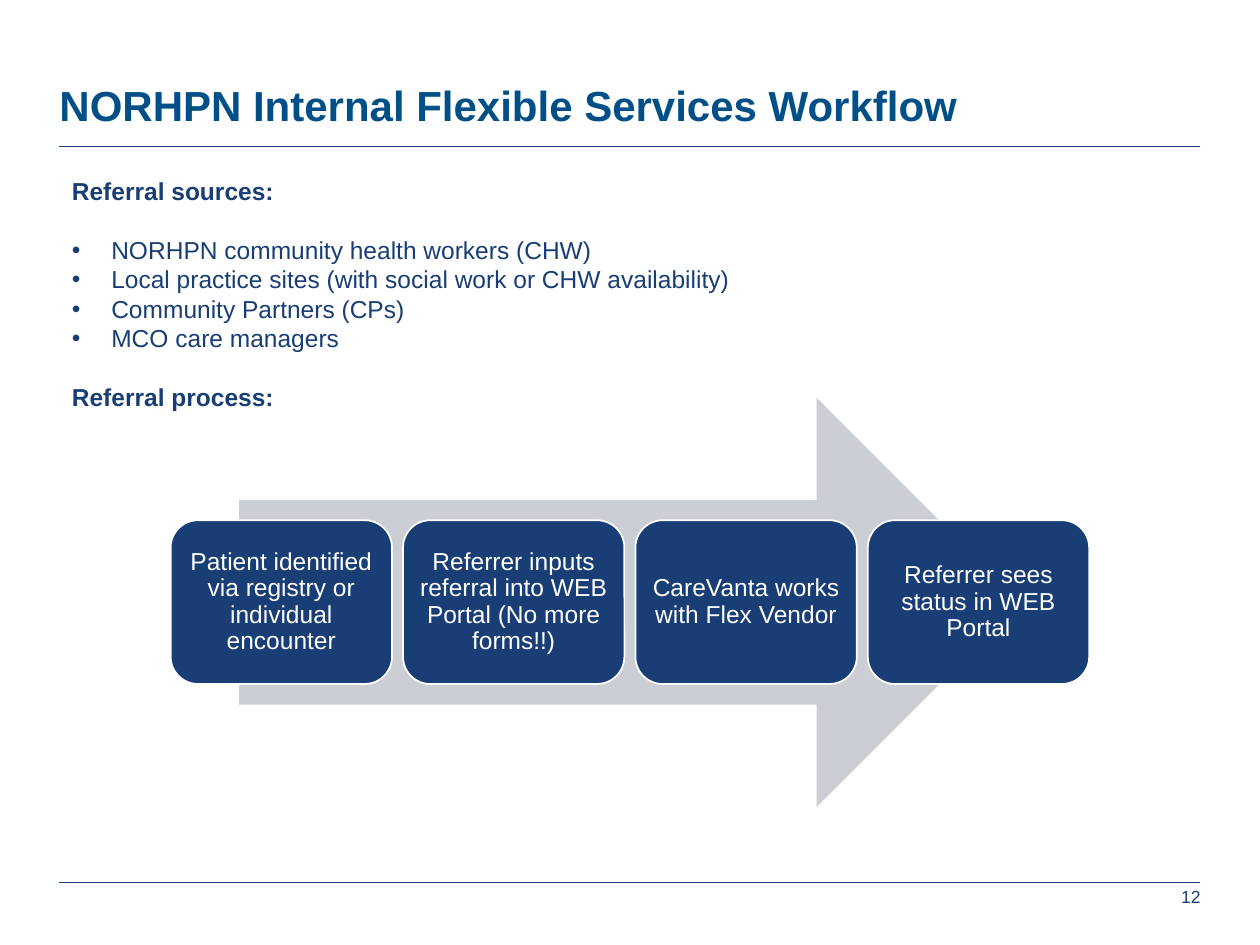
from lxml.etree import SubElement
from pptx import Presentation
from pptx.dml.color import RGBColor
from pptx.enum.shapes import MSO_CONNECTOR, MSO_SHAPE
from pptx.enum.text import MSO_ANCHOR, PP_ALIGN
from pptx.oxml.ns import qn
from pptx.util import Pt

NAVY = "183E75"
TITLE_BLUE = "004F87"
ARROW_GREY = "CCCED6"
WHITE = "FFFFFF"
LEFT, RIGHT = 34, 686
BLANK_LINE = 16.75

SOURCES = [
    "NORHPN community health workers (CHW)",
    "Local practice sites (with social work or CHW availability)",
    "Community Partners (CPs)",
    "MCO care managers",
]
STEPS = [
    "Patient identified via registry or individual encounter",
    "Referrer inputs referral into WEB Portal (No more forms!!)",
    "CareVanta works with Flex Vendor",
    "Referrer sees status in WEB Portal",
]


def color(value):
    return RGBColor.from_string(value)


class SlideBuilder:
    def __init__(self, slide, font="Arial"):
        self.slide = slide
        self.font = font

    def style(self, paragraph, size, hex_color, bold=False):
        paragraph.font.name = self.font
        paragraph.font.size = Pt(size)
        paragraph.font.bold = bold
        paragraph.font.color.rgb = color(hex_color)

    def rule(self, y):
        """Draw a thin horizontal line between the slide margins."""
        line = self.slide.shapes.add_connector(
            MSO_CONNECTOR.STRAIGHT, Pt(LEFT), Pt(y), Pt(RIGHT), Pt(y))
        line.line.color.rgb = color(NAVY)
        line.line.width = Pt(0.75)
        SubElement(line._element.spPr, qn("a:effectLst"))

    def text_box(self, left, top, width, height, margins=(0, 0)):
        """Return the text frame of a new box; margins are horizontal, vertical."""
        frame = self.slide.shapes.add_textbox(
            Pt(left), Pt(top), Pt(width), Pt(height)).text_frame
        self.set_margins(frame, *margins)
        return frame

    def set_margins(self, frame, horizontal, vertical):
        frame.word_wrap = True
        frame.margin_left = frame.margin_right = Pt(horizontal)
        frame.margin_top = frame.margin_bottom = Pt(vertical)

    def label(self, box, text, size, hex_color, bold=False, align=PP_ALIGN.LEFT):
        paragraph = self.text_box(*box).paragraphs[0]
        paragraph.text = text
        paragraph.alignment = align
        self.style(paragraph, size, hex_color, bold)

    def bullet(self, paragraph, indent=22.5):
        properties = paragraph._p.get_or_add_pPr()
        properties.set("marL", str(Pt(indent)))
        properties.set("indent", str(Pt(-indent)))
        SubElement(properties, qn("a:buFont"), typeface=self.font)
        SubElement(properties, qn("a:buChar"), char="•")

    def referral_text(self, box, sources):
        frame = self.text_box(*box, margins=(7.2, 3.6))
        heading = frame.paragraphs[0]
        heading.text = "Referral sources:"
        heading.space_after = Pt(BLANK_LINE)
        self.style(heading, 14, NAVY, bold=True)
        for source in sources:
            paragraph = frame.add_paragraph()
            paragraph.text = source
            self.bullet(paragraph)
            self.style(paragraph, 14, NAVY)
        heading = frame.add_paragraph()
        heading.text = "Referral process:"
        heading.space_before = Pt(BLANK_LINE)
        self.style(heading, 14, NAVY, bold=True)

    def shape(self, preset, left, top, width, height, fill):
        shape = self.slide.shapes.add_shape(
            preset, Pt(left), Pt(top), Pt(width), Pt(height))
        shape.shadow.inherit = False
        shape.fill.solid()
        shape.fill.fore_color.rgb = color(fill)
        shape.line.fill.background()
        return shape

    def step(self, left, top, width, height, text):
        card = self.shape(MSO_SHAPE.ROUNDED_RECTANGLE, left, top, width, height, NAVY)
        card.line.color.rgb = color(WHITE)
        card.line.width = Pt(1)
        frame = card.text_frame
        # The preset already insets its text for the rounded corners.
        self.set_margins(frame, 4.2, 4.2)
        frame.vertical_anchor = MSO_ANCHOR.MIDDLE
        paragraph = frame.paragraphs[0]
        paragraph.text = text
        paragraph.alignment = PP_ALIGN.CENTER
        paragraph.line_spacing = 0.9
        self.style(paragraph, 14, WHITE)


def main():
    presentation = Presentation()
    presentation.slide_width, presentation.slide_height = Pt(720), Pt(540)
    builder = SlideBuilder(presentation.slides.add_slide(presentation.slide_layouts[6]))

    for y in (83.7, 504.4):
        builder.rule(y)
    builder.label((LEFT, 45.7, RIGHT - LEFT, 28),
                  "NORHPN Internal Flexible Services Workflow", 24, TITLE_BLUE, bold=True)
    builder.label((616, 506.2, 70, 18.7), "12", 10, NAVY, align=PP_ALIGN.RIGHT)
    builder.referral_text((LEFT, 97.2, RIGHT - LEFT, 245), SOURCES)

    builder.shape(MSO_SHAPE.RIGHT_ARROW, 136.6, 227.2, 447, 234, ARROW_GREY)
    for index, text in enumerate(STEPS):
        builder.step(97.5 + index * 132.8, 297.3, 126.5, 93.6, text)

    presentation.save("out.pptx")


if __name__ == "__main__":
    main()
